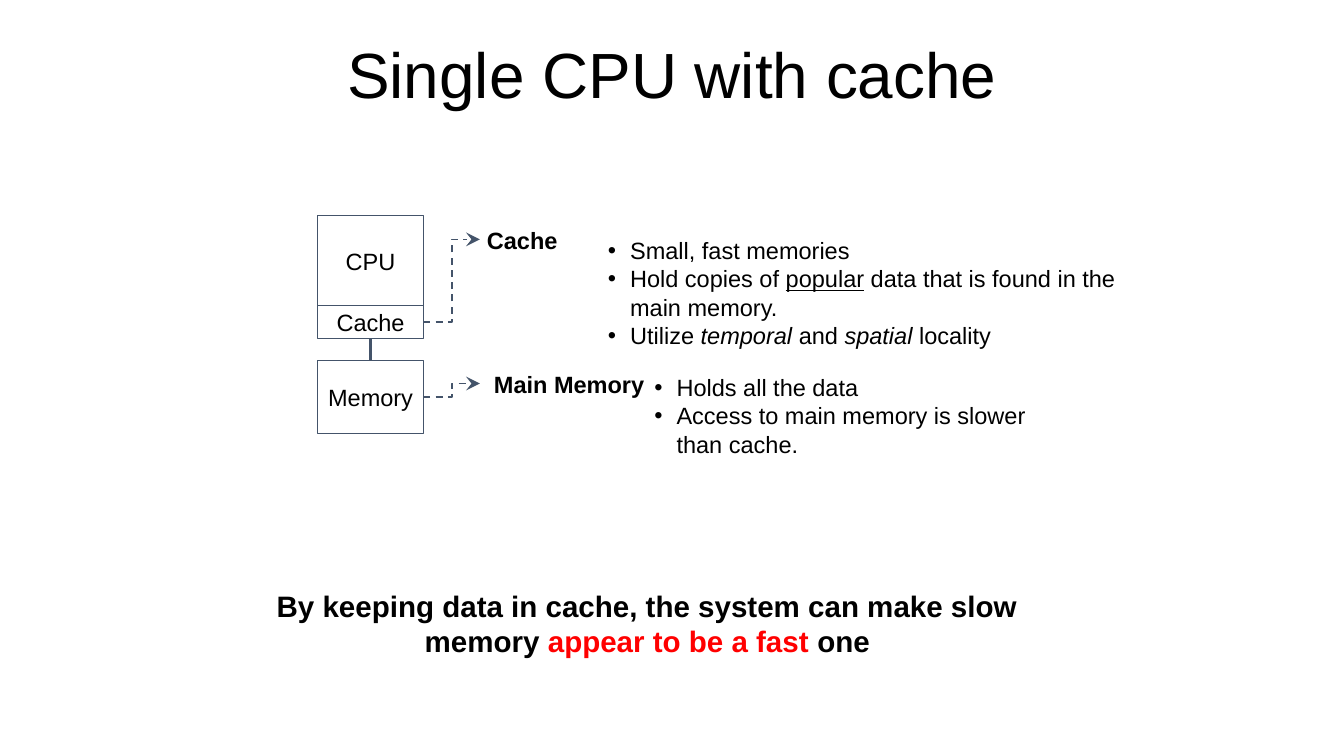
from lxml.etree import SubElement
from pptx import Presentation
from pptx.dml.color import RGBColor
from pptx.enum.dml import MSO_LINE
from pptx.enum.shapes import MSO_CONNECTOR, MSO_SHAPE
from pptx.enum.text import MSO_ANCHOR, MSO_AUTO_SIZE, PP_ALIGN
from pptx.oxml.ns import qn
from pptx.util import Inches, Pt

BLACK = RGBColor(0, 0, 0)
RED = RGBColor(0xFF, 0, 0)
SLATE = RGBColor(0x44, 0x54, 0x6A)
BODY = 16.87
TOP, LEFT, BOTTOM, RIGHT = range(4)  # connection sites of a rectangle


def place(shape, box):
    shape.left, shape.top, shape.width, shape.height = map(Inches, box)


def set_frame(frame, side=0.07, anchor=MSO_ANCHOR.TOP, wrap=True):
    frame.margin_left = frame.margin_right = Inches(side)
    frame.margin_top = frame.margin_bottom = Inches(0.04)
    frame.vertical_anchor = anchor
    frame.word_wrap = wrap


def write(para, parts, size=BODY, align=PP_ALIGN.CENTER, **shared):
    """Fill a paragraph from (text, font settings) pairs."""
    para.alignment = align
    for text, extra in parts:
        run = para.add_run()
        run.text = text
        font = run.font
        font.name, font.size = "Arial", Pt(size)
        look = {"color": BLACK, **shared, **extra}
        font.color.rgb = look.pop("color")
        for name, value in look.items():
            setattr(font, name, value)


def add_title(slide, box, text):
    title = slide.shapes.title
    place(title, box)
    set_frame(title.text_frame, anchor=MSO_ANCHOR.MIDDLE)
    para = title.text_frame.paragraphs[0]
    para.line_spacing = 0.9
    write(para, [(text, {})], 45.56)


def add_text(slide, box, parts, size=BODY, wrap=True):
    area = slide.shapes.add_textbox(*map(Inches, box))
    set_frame(area.text_frame, wrap=wrap)
    area.text_frame.auto_size = MSO_AUTO_SIZE.SHAPE_TO_FIT_TEXT
    write(area.text_frame.paragraphs[0], parts, size, bold=True)
    return area


def add_list(slide, box, items):
    frame = slide.shapes.add_textbox(*map(Inches, box)).text_frame
    set_frame(frame)
    frame.auto_size = MSO_AUTO_SIZE.SHAPE_TO_FIT_TEXT
    for i, parts in enumerate(items):
        para = frame.add_paragraph() if i else frame.paragraphs[0]
        write(para, parts, align=PP_ALIGN.LEFT)
        props = para._p.get_or_add_pPr()
        props.set("marL", str(Inches(0.22)))
        props.set("indent", str(-Inches(0.22)))
        SubElement(props, qn("a:buFont"), typeface="Arial")
        SubElement(props, qn("a:buChar"), char="•")


def add_unit(slide, box, name):
    unit = slide.shapes.add_shape(MSO_SHAPE.RECTANGLE, *map(Inches, box))
    unit.shadow.inherit = False
    unit.fill.background()
    unit.line.color.rgb = SLATE
    unit.line.width = Pt(0.75)
    set_frame(unit.text_frame, 0.08, MSO_ANCHOR.MIDDLE)
    write(unit.text_frame.paragraphs[0], [(name, {})])
    return unit


def link(slide, kind, start, end, width):
    """Join two (shape, site) pairs."""
    line = slide.shapes.add_connector(kind, 0, 0, 0, 0)
    line.begin_connect(*start)
    line.end_connect(*end)
    line.line.color.rgb = SLATE
    line.line.width = Pt(width)
    SubElement(line._element.spPr, qn("a:effectLst"))
    return line


def add_arrow(slide, unit, label):
    arrow = link(slide, MSO_CONNECTOR.ELBOW, (unit, RIGHT), (label, LEFT), 1.25)
    arrow.line.dash_style = MSO_LINE.DASH
    SubElement(arrow.line._get_or_add_ln(), qn("a:tailEnd"),
               type="stealth", w="lg", len="lg")


def add_stack(slide, left, top, width):
    """Draw the CPU on its cache, joined to the memory below."""
    add_unit(slide, (left, top, width, 0.89), "CPU")
    cache = add_unit(slide, (left, top + 0.89, width, 0.33), "Cache")
    memory = add_unit(slide, (left, top + 1.44, width, 0.72), "Memory")
    link(slide, MSO_CONNECTOR.STRAIGHT, (cache, BOTTOM), (memory, TOP), 2)
    return cache, memory


def add_note(slide, unit, label_box, name, list_box, items):
    label = add_text(slide, label_box, [(name, {})], wrap=False)
    add_list(slide, list_box, items)
    add_arrow(slide, unit, label)


def main():
    deck = Presentation()
    deck.slide_width, deck.slide_height = Inches(13.33), Inches(7.5)
    slide = deck.slides.add_slide(deck.slide_layouts[5])
    add_title(slide, (2.52, 0.07, 8.29, 1.4), "Single CPU with cache")
    cache, memory = add_stack(slide, 3.15, 2.14, 1.05)
    add_note(slide, cache, (4.76, 2.2, 0.84, 0.35), "Cache",
             (5.96, 2.3, 5.7, 1.21), [
                 [("Small, fast memories", {})],
                 [("Hold copies of ", {}), ("popular", {"underline": True}),
                  (" data that is found in the main memory.", {})],
                 [("Utilize ", {}), ("temporal", {"italic": True}), (" and ", {}),
                  ("spatial", {"italic": True}), (" locality", {})]])
    add_note(slide, memory, (4.76, 3.63, 1.77, 0.35), "Main Memory",
             (6.42, 3.66, 4.21, 0.92), [
                 [("Holds all the data", {})],
                 [("Access to main memory is slower than cache.", {})]])
    add_text(slide, (2.16, 5.79, 8.52, 0.78), [
        ("By keeping data in cache, the system can make slow memory ", {}),
        ("appear to be a fast ", {"color": RED}), ("one", {})], 21.09)
    deck.save("out.pptx")


if __name__ == "__main__":
    main()
